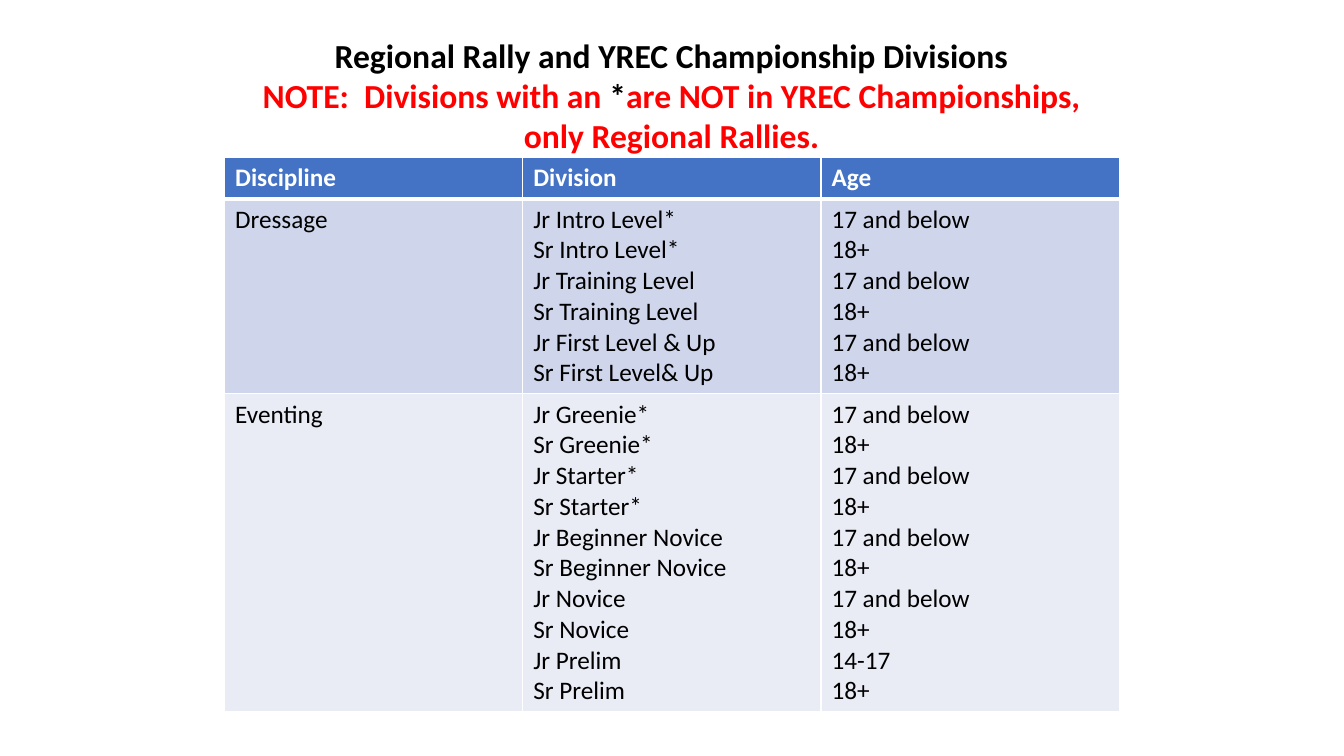
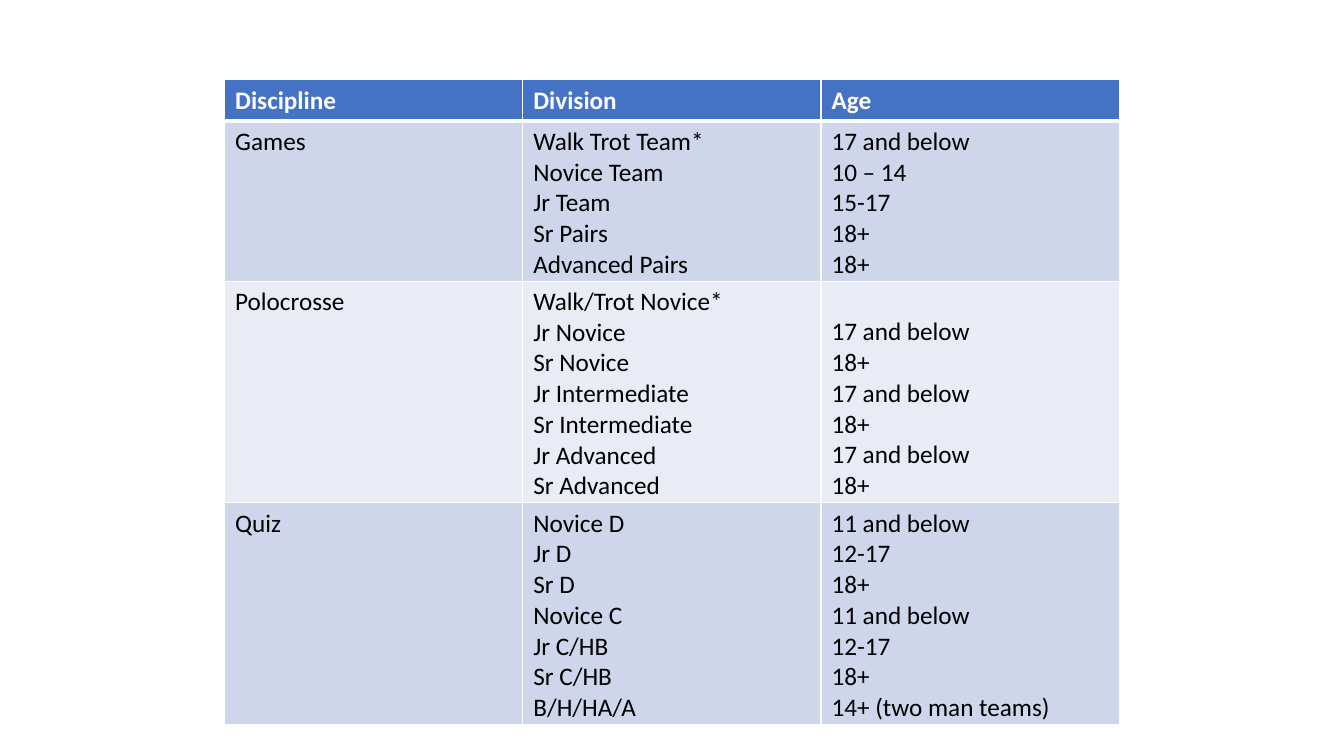
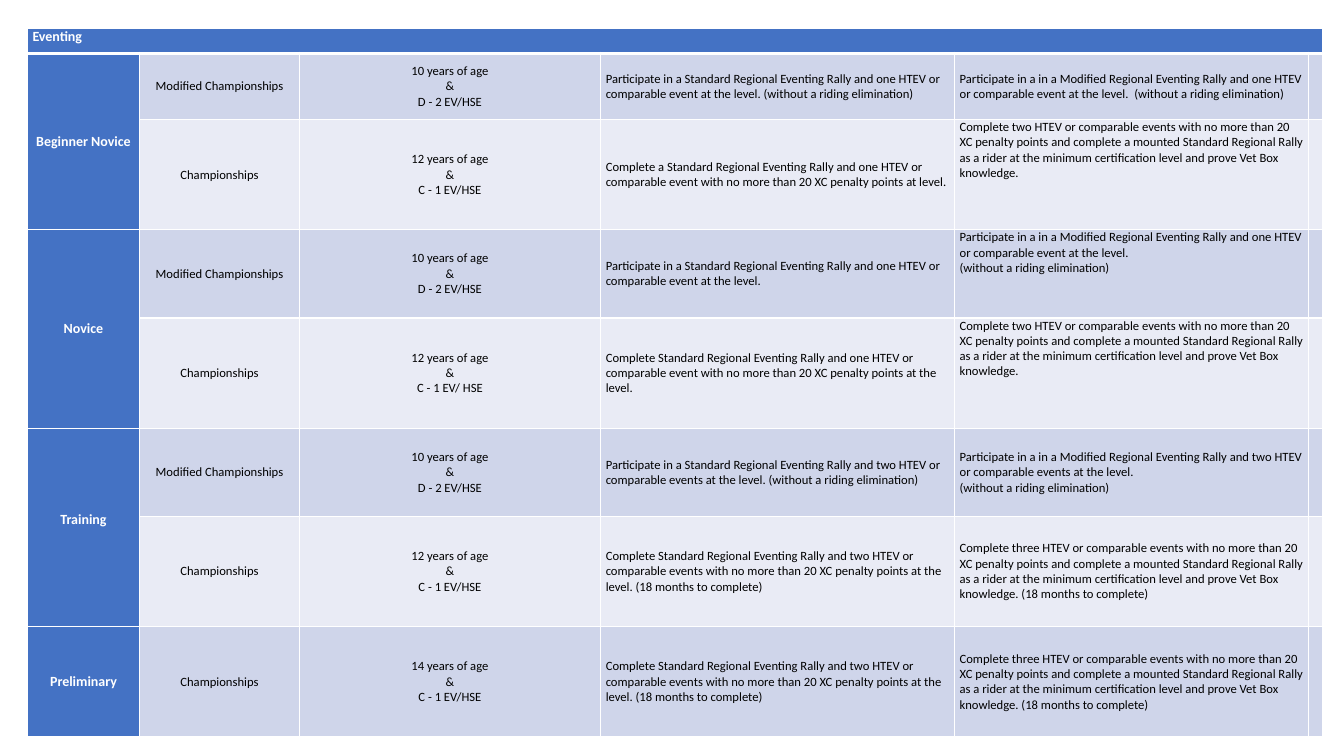
from dataclasses import dataclass, replace
from typing import Any

import pptx
import pptx.dml.color
import pptx.enum.text
import pptx.oxml
import pptx.oxml.ns
import pptx.util

EMU_PER_PX = 9525
FONT = "Calibri"
WHITE = pptx.dml.color.RGBColor(0xFF, 0xFF, 0xFF)
BLACK = pptx.dml.color.RGBColor(0x00, 0x00, 0x00)
RED = pptx.dml.color.RGBColor(0xFF, 0x00, 0x00)
BLUE = pptx.dml.color.RGBColor(0x44, 0x72, 0xC4)
BANDS = (
    pptx.dml.color.RGBColor(0xCF, 0xD5, 0xEA),
    pptx.dml.color.RGBColor(0xE9, 0xEB, 0xF5),
)
LEFT = pptx.enum.text.PP_ALIGN.LEFT
CENTER = pptx.enum.text.PP_ALIGN.CENTER
TOP = pptx.enum.text.MSO_ANCHOR.TOP
MIDDLE = pptx.enum.text.MSO_ANCHOR.MIDDLE
TITLE_ONLY, BLANK = 5, 6


@dataclass(frozen=True)
class CellStyle:
    """Margins run left, top, right, bottom in px."""
    size: int
    color: pptx.dml.color.RGBColor = BLACK
    bold: bool = False
    align: Any = LEFT
    anchor: Any = TOP
    margins: tuple[int, int, int, int] = (10, 5, 10, 5)
    bottom_line: int = 1


@dataclass(frozen=True)
class Discipline:
    name: str
    divisions: str
    ages: str
    skipped_age_height: int = 0


@dataclass(frozen=True)
class Requirement:
    championship: str
    rider: str
    by_rally: str
    by_events: str
    height: int
    events_anchor: Any = MIDDLE


@dataclass(frozen=True)
class Level:
    name: str
    requirements: tuple[Requirement, ...]
    lift: int = 0


DIVISION_HEAD = CellStyle(18, WHITE, True, bottom_line=3)
DIVISION_BODY = CellStyle(18)
EVENTING_HEAD = CellStyle(10, WHITE, True, margins=(5, 0, 5, 0), bottom_line=3)
LEVEL_NAME = replace(EVENTING_HEAD, align=CENTER, anchor=MIDDLE, bottom_line=1)
RULE = CellStyle(9, anchor=MIDDLE, margins=(5, 0, 5, 0))
RULE_CENTERED = replace(RULE, align=CENTER)

RALLY_DISCIPLINES = (
    Discipline(
        "Dressage",
        "Jr Intro Level*\nSr Intro Level*\nJr Training Level\nSr Training Level\n"
        "Jr First Level & Up\nSr First Level& Up",
        "\n".join(["17 and below", "18+"] * 3),
    ),
    Discipline(
        "Eventing",
        "Jr Greenie*\nSr Greenie*\nJr Starter*\nSr Starter*\nJr Beginner Novice\n"
        "Sr Beginner Novice\nJr Novice\nSr Novice\nJr Prelim\nSr Prelim",
        "\n".join(["17 and below", "18+"] * 4 + ["14-17", "18+"]),
    ),
)
TEAM_DISCIPLINES = (
    Discipline(
        "Games",
        "Walk Trot Team*\nNovice Team\nJr Team\nSr Pairs\nAdvanced Pairs",
        "17 and below\n10 – 14\n15-17\n18+\n18+",
    ),
    Discipline(
        "Polocrosse",
        "Walk/Trot Novice*\nJr Novice\nSr Novice\nJr Intermediate\n"
        "Sr Intermediate\nJr Advanced\nSr Advanced",
        "\n".join(["17 and below", "18+"] * 3),
        skipped_age_height=29,
    ),
    Discipline(
        "Quiz",
        "Novice D\nJr D\nSr D\nNovice C\nJr C/HB\nSr C/HB\nB/H/HA/A",
        "\n".join(["11 and below", "12-17", "18+"] * 2 + ["14+ (two man teams)"]),
    ),
)

MODIFIED, FULL = "Modified Championships", "Championships"
AGE_10 = "10 years of age\n&\nD - 2 EV/HSE"
AGE_12 = "12 years of age\n&\nC - 1 EV/HSE"
AGE_14 = "14 years of age\n&\nC - 1 EV/HSE"
NO_ELIMINATION = "(without a riding elimination)"
PARTICIPATE = "Participate in a Standard Regional Eventing Rally and "
PARTICIPATE_MODIFIED = "Participate in a in a Modified Regional Eventing Rally and "
ONE_EVENT = "one HTEV or comparable event at the level."
TWO_EVENTS = "two HTEV or comparable events at the level."
PENALTY = "with no more than 20 XC penalty points"
MOUNTED = (
    f"HTEV or comparable events {PENALTY} and complete a mounted Standard Regional "
    "Rally as a rider at the minimum certification level and prove Vet Box knowledge."
)
COMPLETE_TWO = f"Complete two {MOUNTED}"
COMPLETE_THREE = f"Complete three {MOUNTED} (18 months to complete)"
RALLY_AND_TWO = (
    "Complete Standard Regional Eventing Rally and two HTEV or comparable events "
    f"{PENALTY} at the level. (18 months to complete)"
)

LEVELS = (
    Level("Beginner Novice", (
        Requirement(MODIFIED, AGE_10, f"{PARTICIPATE}{ONE_EVENT} {NO_ELIMINATION}",
                    f"{PARTICIPATE_MODIFIED}{ONE_EVENT}  {NO_ELIMINATION}", 63),
        Requirement(FULL, AGE_12,
                    "Complete a Standard Regional Eventing Rally and one HTEV or "
                    f"comparable event {PENALTY} at level.", COMPLETE_TWO, 105, TOP),
    )),
    Level("Novice", (
        Requirement(MODIFIED, AGE_10, f"{PARTICIPATE}{ONE_EVENT}",
                    f"{PARTICIPATE_MODIFIED}{ONE_EVENT}\n{NO_ELIMINATION}", 84, TOP),
        Requirement(FULL, "12 years of age\n&\nC - 1 EV/ HSE",
                    "Complete Standard Regional Eventing Rally and one HTEV or "
                    f"comparable event {PENALTY} at the level.", COMPLETE_TWO, 105, TOP),
    )),
    Level("Training", (
        Requirement(MODIFIED, AGE_10, f"{PARTICIPATE}{TWO_EVENTS} {NO_ELIMINATION}",
                    f"{PARTICIPATE_MODIFIED}{TWO_EVENTS}\n{NO_ELIMINATION}", 84),
        Requirement(FULL, AGE_12, RALLY_AND_TWO, COMPLETE_THREE, 105),
    ), lift=15),
    Level("Preliminary", (
        Requirement(FULL, AGE_14, RALLY_AND_TWO, COMPLETE_THREE, 105),
    )),
)


def px(length: int) -> pptx.util.Emu:
    return pptx.util.Emu(length * EMU_PER_PX)


def set_all(target: Any, values: dict[str, Any]) -> None:
    for attribute, value in values.items():
        setattr(target, attribute, value)


def format_font(font: Any, size: int, color: pptx.dml.color.RGBColor, bold: bool) -> None:
    set_all(font, {"name": FONT, "size": pptx.util.Pt(size), "bold": bold})
    font.color.rgb = color


def add_borders(cell: Any, bottom_line: int) -> None:
    properties = cell._tc.get_or_add_tcPr()
    for side, points in {"L": 1, "R": 1, "T": 1, "B": bottom_line}.items():
        properties.append(pptx.oxml.parse_xml(
            f'<a:ln{side} {pptx.oxml.ns.nsdecls("a")} w="{pptx.util.Pt(points)}">'
            f'<a:solidFill><a:srgbClr val="{WHITE}"/></a:solidFill></a:ln{side}>'
        ))


def write_cell(cell: Any, text: str, style: CellStyle,
               background: pptx.dml.color.RGBColor) -> None:
    sides = ("margin_left", "margin_top", "margin_right", "margin_bottom")
    set_all(cell, dict(zip(sides, map(px, style.margins))))
    cell.vertical_anchor = style.anchor
    add_borders(cell, style.bottom_line)
    cell.fill.solid()
    cell.fill.fore_color.rgb = background
    cell.text_frame.text = text
    for paragraph in cell.text_frame.paragraphs:
        paragraph.alignment = style.align
        format_font(paragraph.font, style.size, style.color, style.bold)
        for run in paragraph.runs:
            format_font(run.font, style.size, style.color, style.bold)


def add_grid(slide: Any, left: int, top: int, height: int,
             widths: list[int], heights: list[int]) -> Any:
    frame = slide.shapes.add_table(len(heights), len(widths), px(left), px(top),
                                   px(sum(widths)), px(height))
    for column, width in zip(frame.table.columns, widths):
        column.width = px(width)
    for row, row_height in zip(frame.table.rows, heights):
        row.height = px(row_height)
    frame.height = px(height)
    return frame.table


def add_divisions(slide: Any, top: int, height: int, bottom_margin: int,
                  disciplines: tuple[Discipline, ...]) -> None:
    table = add_grid(slide, 214, top, height, [284] * 3, [39] * (len(disciplines) + 1))
    for column, heading in enumerate(("Discipline", "Division", "Age")):
        write_cell(table.cell(0, column), heading, DIVISION_HEAD, BLUE)
    body = replace(DIVISION_BODY, margins=(10, 5, 10, bottom_margin))
    for row, discipline in enumerate(disciplines, start=1):
        band = BANDS[(row - 1) % 2]
        age_top = 5 + discipline.skipped_age_height
        age_style = replace(body, margins=(10, age_top, 10, bottom_margin))
        write_cell(table.cell(row, 0), discipline.name, body, band)
        write_cell(table.cell(row, 1), discipline.divisions, body, band)
        write_cell(table.cell(row, 2), discipline.ages, age_style, band)


def add_rally_title(slide: Any) -> None:
    title = slide.shapes.title
    set_all(title, {"left": px(213), "top": px(28), "width": px(853), "height": px(126)})
    frame = title.text_frame
    set_all(frame, {"word_wrap": True, "vertical_anchor": TOP,
                    "auto_size": pptx.enum.text.MSO_AUTO_SIZE.NONE})
    lines = (
        (("Regional Rally and YREC Championship Divisions", BLACK),),
        (("NOTE:  Divisions with an ", RED), ("*", BLACK),
         ("are NOT in YREC Championships, only Regional Rallies.", RED)),
    )
    for index, line in enumerate(lines):
        paragraph = frame.add_paragraph() if index else frame.paragraphs[0]
        paragraph.alignment = CENTER
        for text, color in line:
            run = paragraph.add_run()
            run.text = text
            format_font(run.font, 24, color, True)


def add_eventing_levels(slide: Any) -> None:
    heights = [24] + [rule.height for level in LEVELS for rule in level.requirements]
    widths = [107, 152, 287, 337, 337, 11]
    table = add_grid(slide, 26, 27, sum(heights), widths, heights)
    for column in range(len(widths)):
        write_cell(table.cell(0, column), "" if column else "Eventing", EVENTING_HEAD, BLUE)
    table.cell(0, 0).merge(table.cell(0, len(widths) - 1))
    row = 1
    for level in LEVELS:
        first_row = row
        name_style = replace(LEVEL_NAME, margins=(5, 0, 5, level.lift))
        for rule in level.requirements:
            band = BANDS[(row - 1) % 2]
            write_cell(table.cell(row, 0), level.name if row == first_row else "",
                       name_style, BLUE)
            entries = (
                (rule.championship, RULE_CENTERED),
                (rule.rider, RULE_CENTERED),
                (rule.by_rally, RULE),
                (rule.by_events, replace(RULE, anchor=rule.events_anchor)),
                ("", RULE),
            )
            for column, (text, style) in enumerate(entries, start=1):
                write_cell(table.cell(row, column), text, style, band)
            row += 1
        if row - first_row > 1:
            table.cell(first_row, 0).merge(table.cell(row - 1, 0))


def main() -> None:
    deck = pptx.Presentation()
    set_all(deck, {"slide_width": px(1280), "slide_height": px(720)})
    rally, teams, eventing = (
        deck.slides.add_slide(deck.slide_layouts[layout])
        for layout in (TITLE_ONLY, BLANK, BLANK)
    )
    add_rally_title(rally)
    add_divisions(rally, 150, 519, 5, RALLY_DISCIPLINES)
    add_divisions(teams, 76, 615, 1, TEAM_DISCIPLINES)
    add_eventing_levels(eventing)
    deck.save("out.pptx")


if __name__ == "__main__":
    main()
